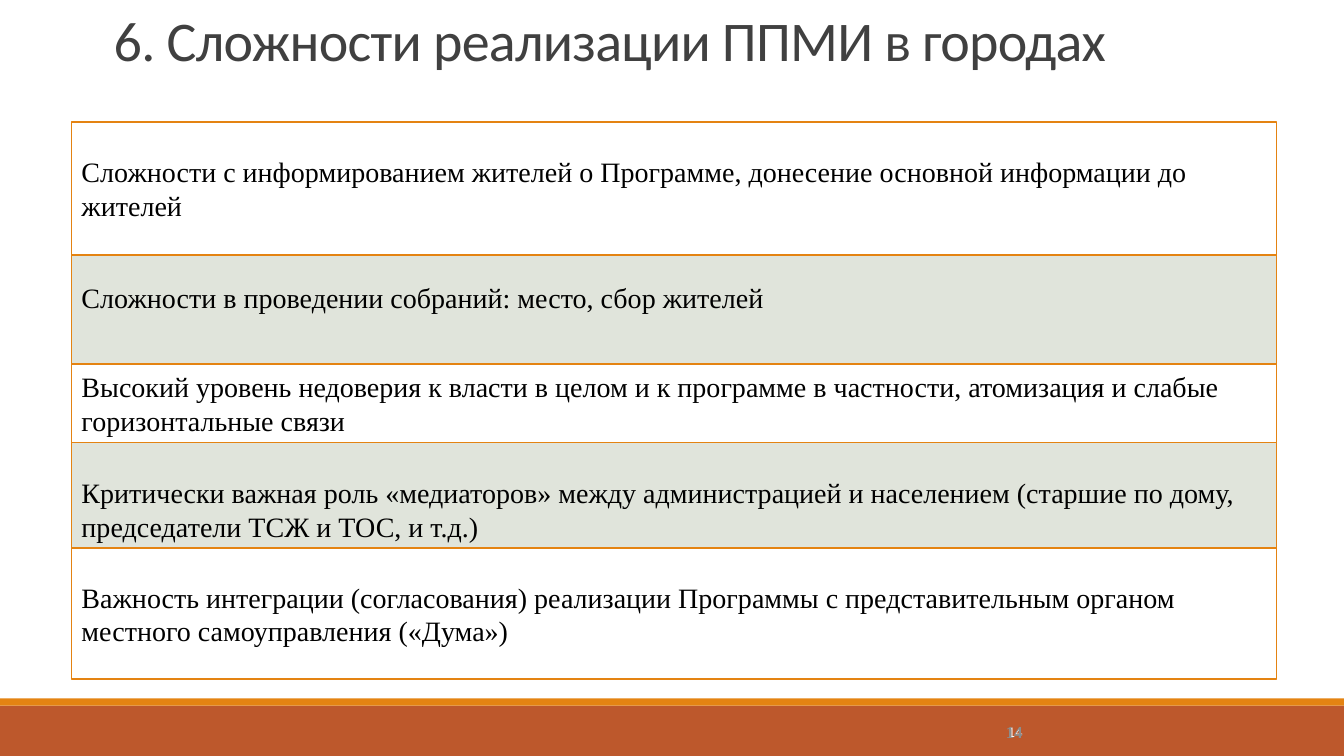
from pptx import Presentation
from pptx.dml.color import RGBColor
from pptx.enum.shapes import MSO_SHAPE
from pptx.enum.text import MSO_ANCHOR, PP_ALIGN
from pptx.util import Inches, Pt

RECT = MSO_SHAPE.RECTANGLE
TOP, MID = MSO_ANCHOR.TOP, MSO_ANCHOR.MIDDLE
LEFT, RIGHT = PP_ALIGN.LEFT, PP_ALIGN.RIGHT
SANS, SERIF = "Calibri", "Times New Roman"
ORANGE, RUST, WHITE, SAGE = "E48312", "BD582C", "FFFFFF", "E0E4DB"

# Content
TITLE = "6. Сложности реализации ППМИ в городах"
PAGE = "14"
ISSUES = [  # top, height, text
    (1.21, 1.32, "Сложности с информированием жителей о Программе, "
                 "донесение основной информации до жителей"),
    (2.29, 1.32, "Сложности в проведении собраний: место, сбор жителей"),
    (3.35, 1.3, "Высокий уровень недоверия к власти в целом и к программе "
                "в частности, атомизация и слабые горизонтальные связи"),
    (4.39, 1.32, "Критически важная роль «медиаторов» между администрацией "
                 "и населением (старшие по дому, председатели ТСЖ и ТОС, и т.д.)"),
    (5.44, 1.3, "Важность интеграции (согласования) реализации Программы "
                "с представительным органом местного самоуправления («Дума»)"),
]
STACK = [2, 1, 3, 0, 4]  # overlapping boxes, back to front
BANDS = [(7, 0.5, RUST), (6.93, 0.07, ORANGE)]
MARKS = [(10.5, SANS, WHITE, False), (12, SERIF, "8C8C8C", True)]

prs = Presentation()
prs.slide_width, prs.slide_height = Inches(13.33), Inches(7.5)
slide = prs.slides.add_slide(prs.slide_layouts[6])


def color(code):
    return RGBColor.from_string(code)


def write(shape, text, size, font, code, anchor=MID, align=LEFT, bold=False):
    frame = shape.text_frame
    frame.text = text
    frame.word_wrap = True
    frame.vertical_anchor = anchor
    para = frame.paragraphs[0]
    para.alignment = align
    run = para.runs[0]
    run.font.size, run.font.name, run.font.bold = Pt(size), font, bold
    run.font.color.rgb = color(code)
    return para


def box(left, top, width, height, fill, line=None):
    shape = slide.shapes.add_shape(
        RECT, Inches(left), Inches(top), Inches(width), Inches(height))
    shape.shadow.inherit = False
    shape.fill.solid()
    shape.fill.fore_color.rgb = color(fill)
    if line:
        shape.line.color.rgb = color(line)
        shape.line.width = Pt(1.25)
    else:
        shape.line.fill.background()
    return shape


def label(left, top, width, height):
    return slide.shapes.add_textbox(
        Inches(left), Inches(top), Inches(width), Inches(height))


# Footer bands
for top, height, fill in BANDS:
    box(0, top, 13.33, height, fill)

# Title
para = write(label(1.03, 0.11, 11.36, 0.72), TITLE, 40, SANS, "404040", TOP)
para.line_spacing = 0.85
para.runs[0].font._element.set("spc", "-50")

# Page number, light with a grey overprint
for size, font, code, bold in MARKS:
    write(label(7.17, 6.95, 3.07, 0.62), PAGE, size, font, code,
          align=RIGHT, bold=bold)

# Issue boxes, alternating fills
for i in STACK:
    top, height, text = ISSUES[i]
    shape = box(0.71, top, 11.95, height, SAGE if i % 2 else WHITE, ORANGE)
    write(shape, text, 20, SERIF, "000000")

prs.save("out.pptx")
